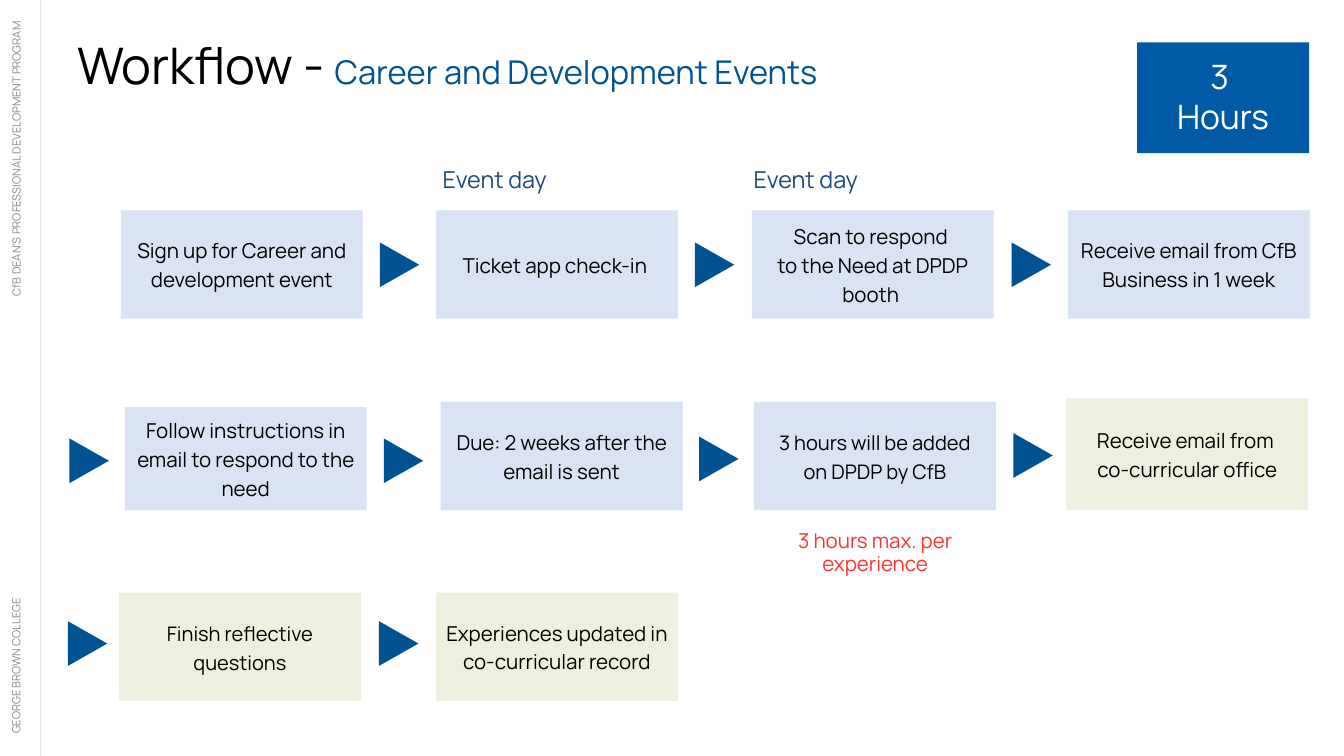
from dataclasses import dataclass

from lxml import etree
from pptx import Presentation
from pptx.dml.color import RGBColor
from pptx.enum import shapes, text
from pptx.oxml import ns
from pptx.util import Cm, Pt

ALIGN = text.PP_ALIGN
ANCHOR = text.MSO_ANCHOR


@dataclass(frozen=True)
class Theme:
    """Font, colours and type sizes of the slide."""
    font: str = "Manrope"
    black: str = "000000"
    white: str = "FFFFFF"
    blue: str = "005293"
    badge: str = "005AA5"
    navy: str = "1F497D"
    red: str = "FF3131"
    grey: str = "898989"
    rule: str = "E7E6E6"
    student: str = "DAE3F3"
    office: str = "EBF1DE"
    title: float = 54
    subtitle: float = 35
    hours: float = 36
    day: float = 25
    step: float = 22
    tight: float = 21.5
    margin: float = 12


class WorkflowSlide:
    """Draws the elements of a workflow on one slide in one style."""

    def __init__(self, slide, theme):
        self.s = slide
        self.theme = theme

    def style_run(self, r, size, color):
        r.font.name = self.theme.font
        r.font.size = Pt(size)
        r.font.color.rgb = RGBColor.from_string(color)

    def fill_text(self, tf, words, size, color, align, spacing=None):
        tf.word_wrap = True
        tf.text = words
        for p in tf.paragraphs:
            p.alignment = align
            if spacing:
                p.line_spacing = Pt(spacing)
            for r in p.runs:
                self.style_run(r, size, color)

    def inset(self, tf, left, top, right, bottom):
        tf.margin_left, tf.margin_top = Cm(left), Cm(top)
        tf.margin_right, tf.margin_bottom = Cm(right), Cm(bottom)

    def title(self, box, parts, spacing):
        sp = self.s.shapes.title
        sp.left, sp.top, sp.width, sp.height = map(Cm, box)
        tf = sp.text_frame
        tf.auto_size = text.MSO_AUTO_SIZE.NONE
        tf.vertical_anchor = ANCHOR.TOP
        self.inset(tf, 0, 0, 0, 0)
        p = tf.paragraphs[0]
        p.alignment = ALIGN.LEFT
        p.line_spacing = Pt(spacing)
        for words, size, color in parts:
            r = p.add_run()
            r.text = words
            self.style_run(r, size, color)

    def label(self, box, words, size, color, align=ALIGN.LEFT, spacing=None,
              insets=(0, 0, 0, 0), rotation=0):
        sp = self.s.shapes.add_textbox(*map(Cm, box))
        sp.rotation = rotation
        self.inset(sp.text_frame, *insets)
        self.fill_text(sp.text_frame, words, size, color, align, spacing)

    def filled(self, kind, box, color):
        sp = self.s.shapes.add_shape(kind, *map(Cm, box))
        sp.shadow.inherit = False
        sp.fill.solid()
        sp.fill.fore_color.rgb = RGBColor.from_string(color)
        sp.line.fill.background()
        return sp

    def block(self, box, words, fill, size, color, spacing):
        sp = self.filled(shapes.MSO_SHAPE.RECTANGLE, box, fill)
        tf = sp.text_frame
        tf.vertical_anchor = ANCHOR.MIDDLE
        self.inset(tf, 0.15, 0.15, 0.15, 0.26)
        self.fill_text(tf, words, size, color, ALIGN.CENTER, spacing)

    def arrow(self, x, y, width=1.69, height=1.49):
        box = (x - width / 2, y - height / 2, width, height)
        sp = self.filled(shapes.MSO_SHAPE.ISOSCELES_TRIANGLE, box, self.theme.blue)
        sp.rotation = 90

    def rule(self, x, bottom):
        line = self.s.shapes.add_connector(
            shapes.MSO_CONNECTOR.STRAIGHT, Cm(x), Cm(0), Cm(x), Cm(bottom))
        line.line.width = Pt(0.75)
        line.line.color.rgb = RGBColor.from_string(self.theme.rule)
        etree.SubElement(line._element.spPr, ns.qn("a:effectLst"))


def main():
    prs = Presentation()
    prs.slide_width, prs.slide_height = Cm(50.8), Cm(28.58)
    t = Theme()
    flow = WorkflowSlide(prs.slides.add_slide(prs.slide_layouts[5]), t)

    flow.rule(1.52, 28.58)
    flow.label((-5.23, 21.36, 11.96, 0.81), "GEORGE BROWN COLLEGE",
               t.margin, t.grey, spacing=14.4, rotation=270)
    flow.label((-5.36, 6.53, 11.96, 0.53),
               "CfB DEAN’S PROFESSIONAL DEVELOPMENT PROGRAM",
               t.margin, t.grey, ALIGN.RIGHT, 14.4, rotation=270)
    flow.title((2.92, 1.52, 46.23, 2.13),
               [("Workflow - ", t.title, t.black),
                ("Career and Development Events", t.subtitle, t.blue)], 58.3)
    flow.block((42.98, 1.6, 6.5, 4.19), "3 \nHours", t.badge, t.hours, t.white, 43.2)

    steps = [
        (4.57, 7.95, 4.1, t.student, t.step,
         "Sign up for Career and development event", None),
        (16.48, 7.95, 4.1, t.student, t.step,
         "Ticket app check-in ", (15.1, 10.01)),
        (28.42, 7.95, 4.1, t.student, t.step,
         "Scan to respond \nto the Need at DPDP booth ", (27.01, 10.01)),
        (40.36, 7.95, 4.1, t.student, t.step,
         "Receive email from CfB Business in 1 week", (38.98, 10.01)),
        (4.72, 15.39, 3.9, t.student, t.step,
         "Follow instructions in email to respond to the need", (3.37, 17.42)),
        (16.66, 15.19, 4.1, t.student, t.step,
         "Due: 2 weeks after the email is sent", (15.25, 17.42)),
        (28.5, 15.19, 4.1, t.student, t.tight,
         "3 hours will be added\non DPDP by CfB", (27.17, 17.35)),
        (40.31, 15.06, 4.22, t.office, t.step,
         "Receive email from \nco-curricular office", (39.05, 17.22)),
        (4.5, 22.4, 4.1, t.office, t.tight,
         "Finish reflective questions", (3.31, 24.33)),
        (16.48, 22.4, 4.1, t.office, t.step,
         "Experiences updated in co-curricular record", (15.07, 24.33)),
    ]
    for left, top, height, fill, size, words, arrow in steps:
        flow.block((left, top, 9.14, height), words, fill, size, t.black, 30.8)
        if arrow:
            flow.arrow(*arrow)

    for left in (16.48, 28.24):
        flow.label((left, 6.12, 7.01, 1.32), "Event day", t.day, t.navy,
                   insets=(0.25, 0.13, 0.25, 0.13))
    flow.label((29.31, 20.07, 7.54, 1.7), "3 hours max. per experience",
               t.step, t.red, ALIGN.CENTER, 23.8)

    prs.save("out.pptx")


if __name__ == "__main__":
    main()
